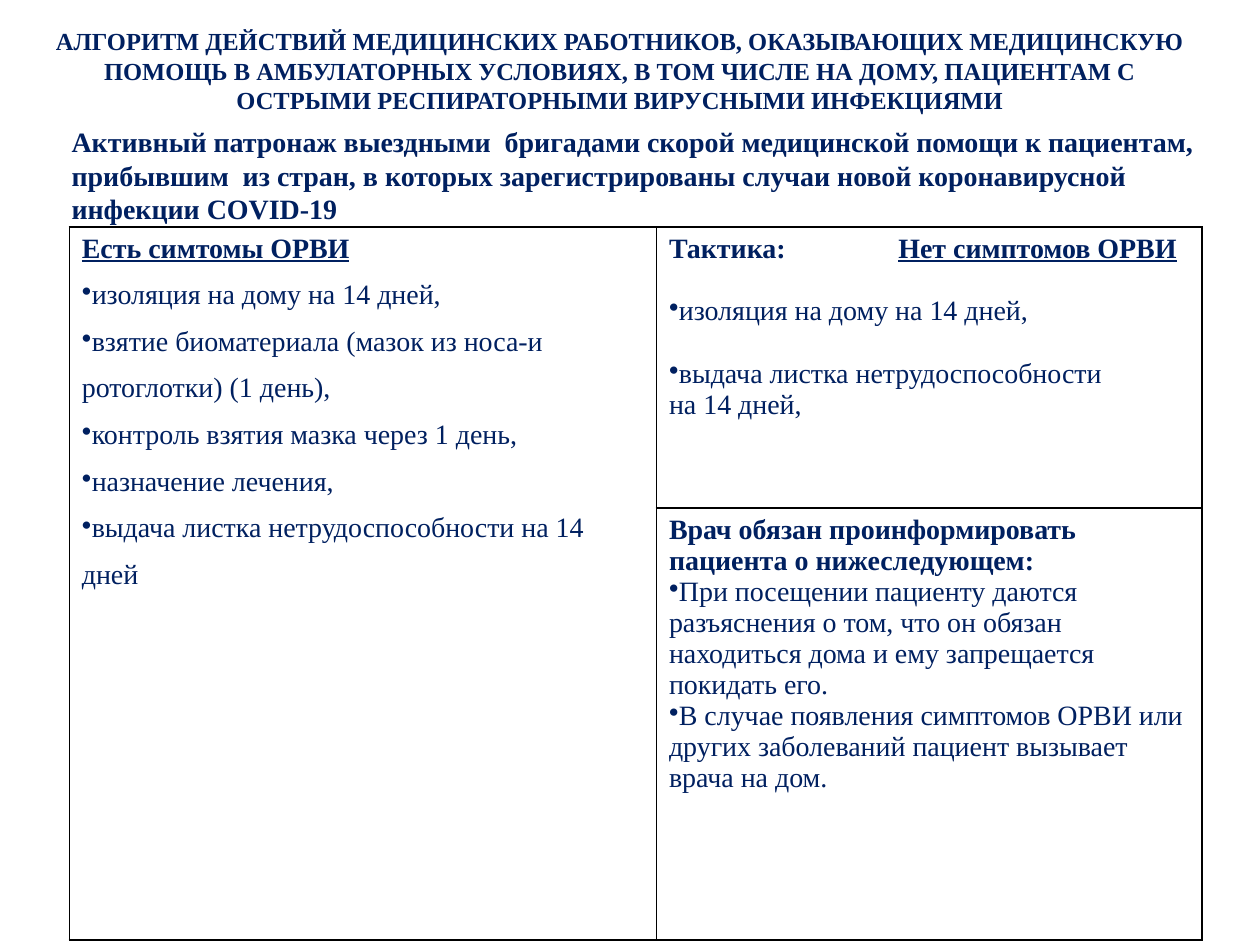
"""Build the slide on managing outpatients with acute respiratory viral infections."""
import lxml.etree
import pptx
import pptx.dml.color
import pptx.enum.text
import pptx.oxml
import pptx.oxml.ns
import pptx.util
from pptx.util import Inches

NAVY = "002060"
BLACK = "000000"


def color(value):
    return pptx.dml.color.RGBColor.from_string(value)


def write(frame, text, size=16, bold=False, underline=False, bullet=False,
          line_spacing=None, before=0, align=None, tab=None, new=True):
    if new and frame.paragraphs[0].runs:
        frame.add_paragraph()
    paragraph = frame.paragraphs[-1]
    if align is not None:
        paragraph.alignment = align
    if line_spacing:
        paragraph.line_spacing = line_spacing
    if before:
        paragraph.space_before = pptx.util.Pt(before)
    properties = paragraph._p.get_or_add_pPr()
    if bullet:
        properties.set("marL", "0")
        properties.set("indent", "0")
        lxml.etree.SubElement(properties, pptx.oxml.ns.qn("a:buChar"), char="•")
    if tab:
        tabs = lxml.etree.SubElement(properties, pptx.oxml.ns.qn("a:tabLst"))
        lxml.etree.SubElement(tabs, pptx.oxml.ns.qn("a:tab"), pos=str(Inches(tab)), algn="l")
    run = paragraph.add_run()
    run.text = text
    run.font.name = "Times New Roman"
    run.font.size = pptx.util.Pt(size)
    run.font.bold = bold
    run.font.underline = underline
    run.font.color.rgb = color(NAVY)


presentation = pptx.Presentation()
presentation.slide_width = Inches(10)
presentation.slide_height = Inches(7.5)
slide = presentation.slides.add_slide(presentation.slide_layouts[6])

table = slide.shapes.add_table(2, 2, Inches(0.55), Inches(1.8), Inches(8.99), Inches(5.66)).table
table.first_row = False
table.horz_banding = False
for column, width in zip(table.columns, (4.66, 4.33)):
    column.width = Inches(width)
for row, height in zip(table.rows, (2.23, 3.43)):
    row.height = Inches(height)
for cell in table.iter_cells():
    cell_properties = cell._tc.get_or_add_tcPr()
    for side in ("lnL", "lnR", "lnT", "lnB"):
        cell_properties.append(pptx.oxml.parse_xml(
            f'<a:{side} {pptx.oxml.ns.nsdecls("a")} w="{pptx.util.Pt(1)}">'
            f'<a:solidFill><a:srgbClr val="{BLACK}"/></a:solidFill></a:{side}>'))
    cell.fill.background()
table.cell(0, 0).merge(table.cell(1, 0))

symptoms = table.cell(0, 0).text_frame
write(symptoms, "Есть симтомы ОРВИ", bold=True, underline=True)
for text in (
    "изоляция на дому на 14 дней,",
    "взятие биоматериала (мазок из носа-и ротоглотки) (1 день),",
    "контроль взятия мазка через 1 день,",
    "назначение лечения,",
    "выдача листка нетрудоспособности на 14 дней",
):
    write(symptoms, text, bullet=True, line_spacing=1.5)

tactics = table.cell(0, 1).text_frame
write(tactics, "Тактика:\t", bold=True, tab=1.82)
write(tactics, "Нет симптомов ОРВИ", bold=True, underline=True, new=False)
for text in ("изоляция на дому на 14 дней,", "выдача листка нетрудоспособности"):
    write(tactics, text, bullet=True, before=18)
write(tactics, "на 14 дней,")

advice = table.cell(1, 1).text_frame
write(advice, "Врач обязан проинформировать пациента о нижеследующем:", bold=True)
for text in (
    "При посещении пациенту даются разъяснения о том, что он обязан находиться дома "
    "и ему запрещается покидать его.",
    "В случае появления симптомов ОРВИ или других заболеваний пациент вызывает врача на дом.",
):
    write(advice, text, bullet=True)

title = slide.shapes.add_textbox(Inches(0.23), Inches(0.16), Inches(9.38), Inches(0.81)).text_frame
title.word_wrap = True
write(title, "АЛГОРИТМ ДЕЙСТВИЙ МЕДИЦИНСКИХ РАБОТНИКОВ, ОКАЗЫВАЮЩИХ МЕДИЦИНСКУЮ ПОМОЩЬ "
      "В АМБУЛАТОРНЫХ УСЛОВИЯХ, В ТОМ ЧИСЛЕ НА ДОМУ, ПАЦИЕНТАМ С ОСТРЫМИ "
      "РЕСПИРАТОРНЫМИ ВИРУСНЫМИ ИНФЕКЦИЯМИ",
      size=14, bold=True, align=pptx.enum.text.PP_ALIGN.CENTER)

patronage = slide.shapes.add_textbox(Inches(0.47), Inches(0.94), Inches(9.92), Inches(0.91)).text_frame
patronage.word_wrap = True
for text in (
    "Активный патронаж выездными  бригадами скорой медицинской помощи к пациентам, "
    "прибывшим  из стран, в которых зарегистрированы случаи новой коронавирусной",
    "инфекции COVID-19",
):
    write(patronage, text, bold=True)

presentation.save("out.pptx")
